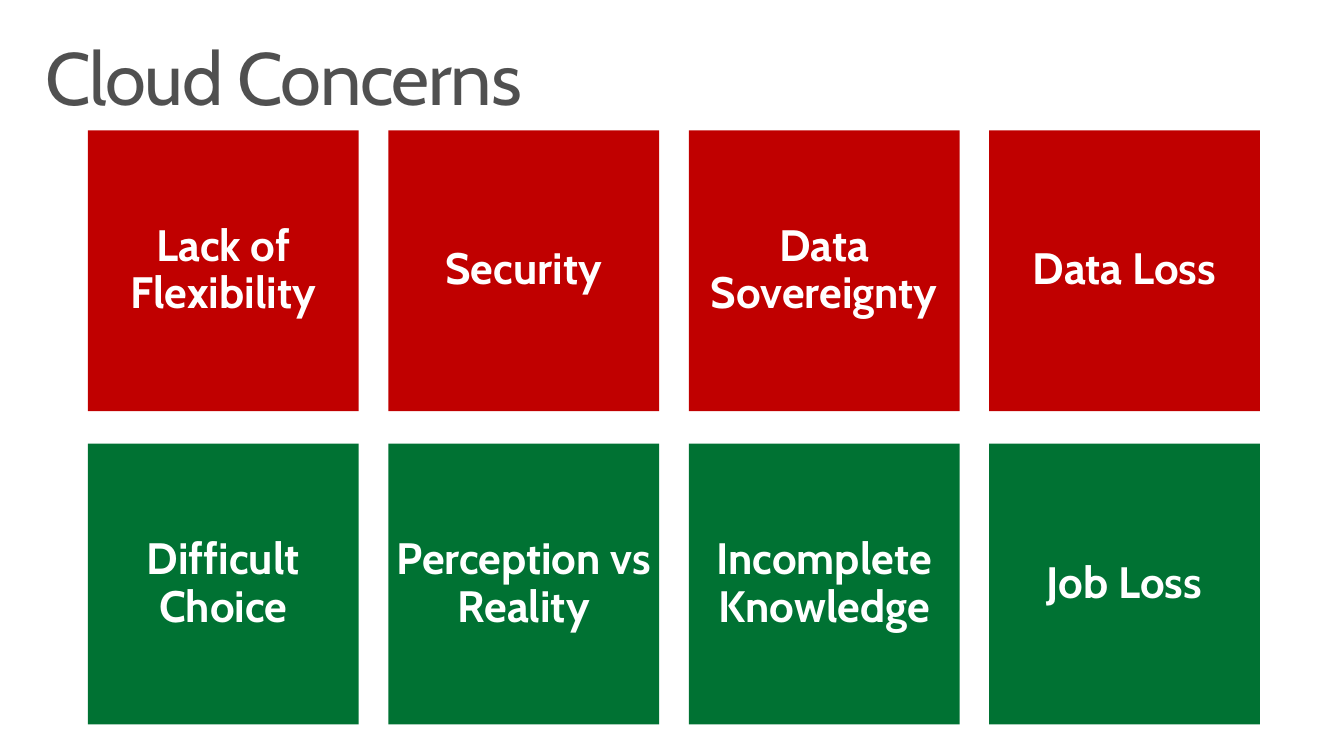
from pptx import Presentation
from pptx import util as u
from pptx.dml.color import RGBColor
from pptx.enum import shapes, text

PX = 9144  # EMU per px, 100 px to the inch
GREY = RGBColor(0x50, 0x50, 0x50)
RED = RGBColor(0xC0, 0x00, 0x00)
GREEN = RGBColor(0x00, 0x72, 0x33)
WHITE = RGBColor(0xFF, 0xFF, 0xFF)


def box(*lengths):
    return [u.Emu(n * PX) for n in lengths]


def write(sp, words, size, color, bold, align, anchor, inset_x, inset_y):
    tf = sp.text_frame
    frame = {"word_wrap": True, "vertical_anchor": anchor,
             "margin_left": inset_x * PX, "margin_right": inset_x * PX,
             "margin_top": inset_y * PX, "margin_bottom": inset_y * PX}
    for name, value in frame.items():
        setattr(tf, name, value)
    p = tf.paragraphs[0]
    p.alignment, p.line_spacing = align, 0.9
    r = p.add_run()
    r.text = words
    for name, value in {"name": "Cabin", "size": u.Pt(size), "bold": bold}.items():
        setattr(r.font, name, value)
    r.font.color.rgb = color
    return r


prs = Presentation()
prs.slide_width, prs.slide_height = box(1360, 765)
s = prs.slides.add_slide(prs.slide_layouts[6])

# Title, with slightly tightened letters
title = s.shapes.add_textbox(*box(30, 32, 1300, 100))
r = write(title, "Cloud Concerns", 54, GREY, False,
          text.PP_ALIGN.LEFT, text.MSO_ANCHOR.TOP, 16, 10)
r.font._element.set("spc", "-100")

# Two rows of concern tiles
LEFT, TOP, TILE_W, TILE_H = 89, 132, 274, 284
STEP_X, STEP_Y = 304, 317
rows = [
    (RED, ["Lack of Flexibility", "Security", "Data Sovereignty", "Data Loss"]),
    (GREEN, ["Difficult Choice", "Perception vs Reality",
             "Incomplete Knowledge", "Job Loss"]),
]
for row, (color, concerns) in enumerate(rows):
    for col, concern in enumerate(concerns):
        sp = s.shapes.add_shape(
            shapes.MSO_SHAPE.RECTANGLE,
            *box(LEFT + col * STEP_X, TOP + row * STEP_Y, TILE_W, TILE_H))
        sp.shadow.inherit = False
        sp.fill.solid()
        sp.fill.fore_color.rgb = color
        sp.line.fill.background()
        write(sp, concern, 32, WHITE, True,
              text.PP_ALIGN.CENTER, text.MSO_ANCHOR.MIDDLE, 5, 5)

prs.save("out.pptx")
